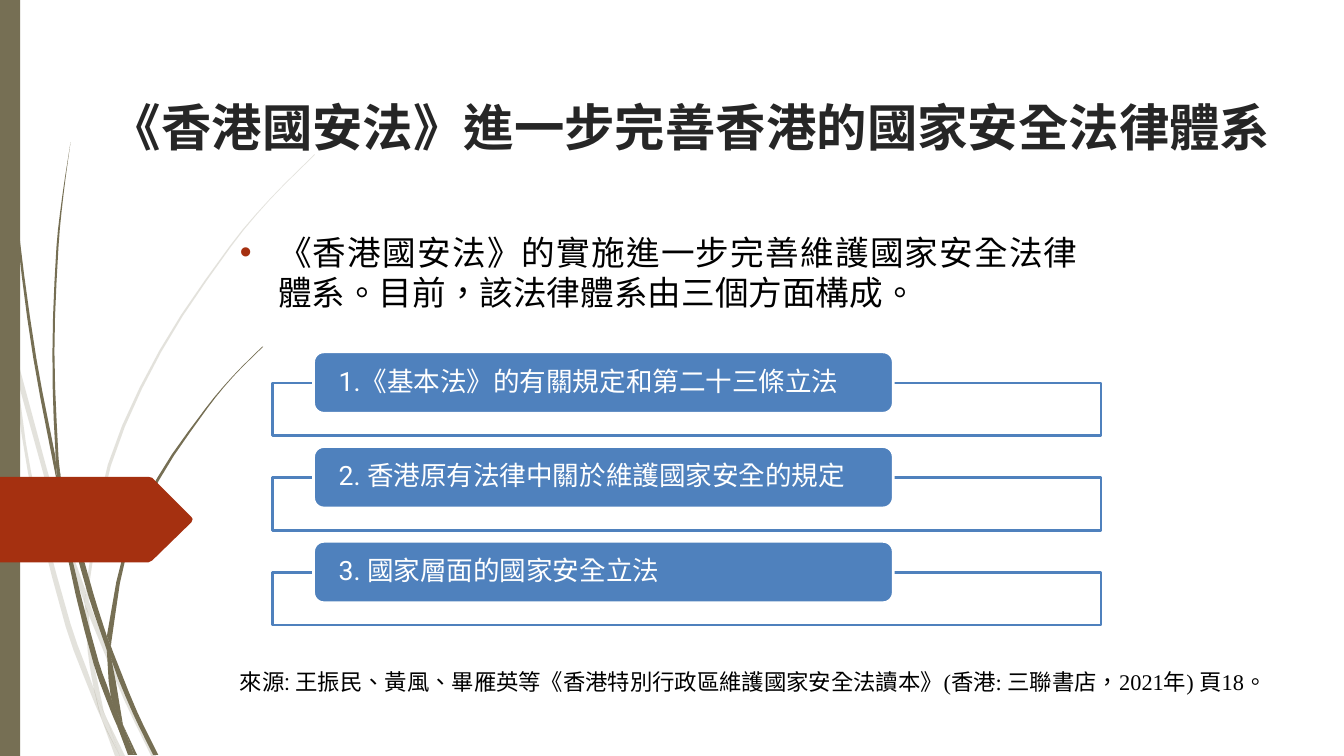
"""Build a slide on how the security law completes the legal system of Hong Kong."""
from math import dist

from lxml import etree
from pptx import Presentation
from pptx.dml.color import RGBColor
from pptx.enum.shapes import MSO_SHAPE
from pptx.enum.text import MSO_ANCHOR, PP_ALIGN
from pptx.oxml.ns import qn
from pptx.util import Inches, Pt

RECT, ROUNDED = MSO_SHAPE.RECTANGLE, MSO_SHAPE.ROUNDED_RECTANGLE
TOP, MIDDLE, BOTTOM = MSO_ANCHOR.TOP, MSO_ANCHOR.MIDDLE, MSO_ANCHOR.BOTTOM
LEFT, JUSTIFY = PP_ALIGN.LEFT, PP_ALIGN.JUSTIFY
OLIVE = RGBColor(0x76, 0x6F, 0x54)
RUST = RGBColor(0xA5, 0x30, 0x10)
BLUE = RGBColor(0x4F, 0x81, 0xBD)
WHITE = RGBColor(0xFF, 0xFF, 0xFF)
BLACK = RGBColor(0, 0, 0)
CHARCOAL = RGBColor(0x26, 0x26, 0x26)
SANS, SERIF = "Roboto", "Times New Roman"
STEPS = 3

PALE_WISPS = [
    ([(.17, 3.76), (.58, 5.22), (.84, 5.99)], [(.85, 5.86), (.62, 5.2), (.14, 3.45)]),
    ([(.88, 6.1), (1.23, 6.94), (1.5, 7.5)],
     [(1.55, 7.5), (1.27, 6.92), (.92, 6.07), (.88, 5.96)]),
    ([(1.05, 7.11), (1.19, 7.5)], [(1.24, 7.5), (1.05, 7.11)]),
    ([(1.01, 7.14), (.93, 6.83), (.7, 6.19), (.31, 4.69), (.17, 3.76), (.11, 3.5)],
     [(.11, 3.5), (.28, 4.7), (.65, 6.21), (.92, 6.93), (1.01, 7.14)]),
    ([(.84, 5.99), (.87, 6.46), (.93, 6.83), (.96, 6.92), (1.05, 7.11)],
     [(1.03, 7.06), (.91, 6.46), (.88, 6.1), (.84, 5.99)]),
    ([(.88, 5.96), (.88, 5.84), (1.1, 4.62), (1.6, 3.49), (2.29, 2.45), (2.68, 1.98),
      (3.12, 1.54)],
     [(3.12, 1.53), (2.68, 1.97), (2.28, 2.44), (1.58, 3.48), (1.07, 4.61), (.85, 5.84)]),
    ([(1.01, 7.14), (1.14, 7.5)], [(1.19, 7.5), (1.01, 7.14)]),
    ([(.88, 6.1), (.88, 5.96)], [(.85, 5.86), (.84, 5.99), (.88, 6.1)]),
    ([(.93, 6.83), (1.01, 7.14), (1.19, 7.5)],
     [(1.19, 7.5), (1.05, 7.11), (.96, 6.92), (.93, 6.83)]),
]
DARK_WISPS = [
    ([(.03, 0), (.03, .48), (.07, 1.1), (.17, 2.33), (.33, 3.55), (.57, 4.81)],
     [(.55, 4.53), (.36, 3.55), (.19, 2.32), (.08, 1.09), (.05, .48), (.03, 0)]),
    ([(.64, 5.05), (.88, 5.92), (1.06, 6.45)], [(1.06, 6.31), (.93, 5.9), (.6, 4.72)]),
    ([(1.1, 6.41), (1.11, 6.56), (1.32, 7.08), (1.52, 7.49)],
     [(1.57, 7.49), (1.36, 7.06), (1.13, 6.49), (1.1, 6.41)]),
    ([(.57, 4.77), (.68, 5.57), (.93, 6.59), (1.11, 7.08), (1.17, 7.22)],
     [(1.16, 7.17), (1.1, 6.91), (.98, 6.57), (.72, 5.56), (.64, 5.05), (.57, 4.77)]),
    ([(.6, 4.72), (.58, 4.53), (.54, 3.49), (.58, 2.45), (.63, 1.93), (.7, 1.41)],
     [(.7, 1.41), (.62, 1.93), (.56, 2.45), (.52, 3.49), (.55, 4.49), (.6, 4.72)]),
    ([(1.22, 7.19), (1.33, 7.49)], [(1.36, 7.49), (1.22, 7.19)]),
    ([(.55, 4.49), (.57, 4.77), (.64, 5.05)], [(.64, 5.05), (.6, 4.72), (.55, 4.49)]),
    ([(1.1, 6.41), (1.11, 6.33), (1.25, 5.52), (1.58, 4.76), (2.05, 4.06), (2.31, 3.74),
      (2.61, 3.44)],
     [(2.6, 3.44), (2.31, 3.73), (2.04, 4.05), (1.56, 4.74), (1.22, 5.51), (1.06, 6.31)]),
    ([(1.17, 7.22), (1.27, 7.49)], [(1.31, 7.49), (1.17, 7.22)]),
    ([(1.06, 6.45), (1.1, 6.91), (1.22, 7.19)], [(1.22, 7.19), (1.11, 6.56), (1.06, 6.45)]),
    ([(1.06, 6.31), (1.06, 6.45), (1.11, 6.56)], [(1.1, 6.41), (1.06, 6.31)]),
    ([(1.1, 6.91), (1.17, 7.22), (1.3, 7.49)],
     [(1.33, 7.49), (1.22, 7.19), (1.16, 7.06), (1.1, 6.91)]),
]
ARROW = [(0, 4.73), (1.47, 4.73), (1.51, 4.74), (1.9, 5.13), (1.91, 5.15), (1.9, 5.18),
         (1.51, 5.56), (1.47, 5.58), (0, 5.58)]
LAWS = [
    [("1.《基本法》的有關規定和第", SANS), ("二十三", SERIF), ("條立法", SANS)],
    [("2. 香港原有法律中關於維護國家安全的規定", SANS)],
    [("3. 國家層面的國家安全立法", SANS)],
]


def smooth(edge):
    """Return points of a smooth curve through the points of an edge."""
    slopes = []
    for i in range(len(edge)):
        before, after = edge[max(i - 1, 0)], edge[min(i + 1, len(edge) - 1)]
        span = dist(before, edge[i]) + dist(edge[i], after)
        slopes.append([(b - a) / span for a, b in zip(before, after)])
    points = [edge[0]]
    for a, b, m, n in zip(edge, edge[1:], slopes, slopes[1:]):
        h = dist(a, b)
        for t in (k / STEPS for k in range(1, STEPS + 1)):
            w = t * t * (3 - 2 * t)
            points.append([a[j] + (b[j] - a[j]) * w + h * t * (1 - t)
                           * ((1 - t) * m[j] - t * n[j]) for j in (0, 1)])
    return points


def write(shape, runs, size, color, anchor, align=LEFT):
    """Fill a shape with one paragraph of runs and return the paragraph."""
    tf = shape.text_frame
    tf.word_wrap = True
    tf.vertical_anchor = anchor
    p = tf.paragraphs[0]
    p.alignment = align
    for text, font in runs:
        r = p.add_run()
        r.text = text
        r.font.name, r.font.size, r.font.color.rgb = font, Pt(size), color
        r._r.get_or_add_rPr().set("lang", "zh-TW")
    return p


prs = Presentation()
prs.slide_width, prs.slide_height = Inches(13.33), Inches(7.5)
s = prs.slides.add_slide(prs.slide_layouts[6])

outlines = []
for wisps, alpha in ((PALE_WISPS, 20), (DARK_WISPS, 100)):
    group = s.shapes.add_group_shape()
    outlines += [(group.shapes, smooth(out) + smooth(back), OLIVE, alpha)
                 for out, back in wisps]

bar = s.shapes.add_shape(RECT, 0, 0, Inches(.2), prs.slide_height)
bar.shadow.inherit = False
bar.fill.solid()
bar.fill.fore_color.rgb = OLIVE
bar.line.fill.background()

outlines.append((s.shapes, ARROW, RUST, 100))
for shapes, points, color, alpha in outlines:
    corners = [(Inches(x), Inches(y)) for x, y in points]
    fb = shapes.build_freeform(*corners[0])
    fb.add_line_segments(corners[1:])
    sp = fb.convert_to_shape()
    sp.shadow.inherit = False
    sp.fill.solid()
    sp.fill.fore_color.rgb = color
    sp.line.fill.background()
    if alpha < 100:
        rgb = sp.fill._xPr.find(".//" + qn("a:srgbClr"))
        etree.SubElement(rgb, qn("a:alpha"), val=str(alpha * 1000))

title = s.shapes.add_textbox(Inches(.84), Inches(.35), Inches(12.13), Inches(1.25))
title.text_frame.margin_left = Inches(.26)
p = write(title, [("《香港國安法》進一步完善香港的國家安全法律體系", SANS)], 36, CHARCOAL, BOTTOM)
p.runs[0].font.bold = True

body = s.shapes.add_textbox(Inches(2.28), Inches(2.25), Inches(8.51), Inches(4.68))
p = write(body, [("《香港國安法》的實施進一步完善維護國家安全法律體系。目前，該法律體系由三個方面構成。",
                  SANS)], 24, BLACK, TOP, JUSTIFY)
pPr = p._p.get_or_add_pPr()
pPr.set("marL", str(Inches(.38)))
pPr.set("indent", str(-Inches(.38)))
etree.SubElement(etree.SubElement(pPr, qn("a:buClr")), qn("a:srgbClr"), val=str(RUST))
etree.SubElement(pPr, qn("a:buFont"), typeface="Arial")
etree.SubElement(pPr, qn("a:buChar"), char="•")

for row, runs in enumerate(LAWS):
    y = 3.49 + .94 * row
    frame = s.shapes.add_shape(RECT, Inches(2.7), Inches(y + .31), Inches(8.22), Inches(.52))
    tab = s.shapes.add_shape(ROUNDED, Inches(3.11), Inches(y), Inches(5.75), Inches(.61))
    for sp, fill, line in ((frame, WHITE, BLUE), (tab, BLUE, WHITE)):
        sp.shadow.inherit = False
        sp.fill.solid()
        sp.fill.fore_color.rgb = fill
        sp.line.color.rgb = line
        sp.line.width = Pt(2)
    tf = tab.text_frame
    tf.margin_left = tf.margin_right = Inches(.22)
    tf.margin_top = tf.margin_bottom = 0
    write(tab, runs, 19, WHITE, MIDDLE).line_spacing = .9

source = s.shapes.add_textbox(Inches(2.28), Inches(6.58), Inches(10.39), Inches(.37))
write(source, [("來源: ", SANS),
               ("王振民、黃風、畢雁英等《香港特別行政區維護國家安全法讀本》(香港: 三聯書店，2021年) 頁18。",
                SERIF)], 16, BLACK, TOP)

prs.save("out.pptx")
